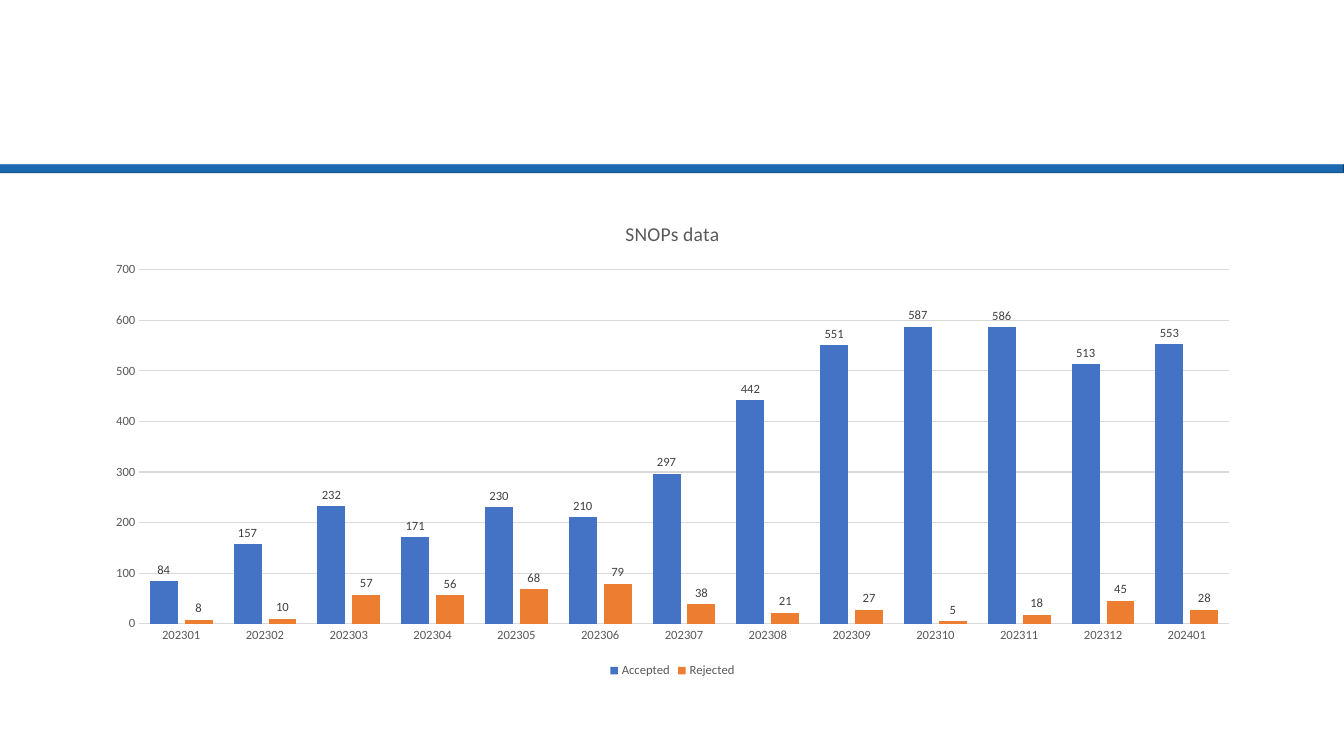
from pptx import Presentation
from pptx import util as u
from pptx.chart.data import CategoryChartData
from pptx.dml.color import RGBColor
from pptx.enum import chart as ch, shapes

COLORS = {
    "bar": "1B69B0", "accepted": "4472C4", "rejected": "ED7D31",
    "grid": "D9D9D9", "muted": "595959", "label": "404040", "black": "000000",
}
EMU_PER_PX = 914400 / 100.8
MONTHS = [f"2023{month:02d}" for month in range(1, 13)] + ["202401"]
SERIES = {
    "Accepted": [84, 157, 232, 171, 230, 210, 297, 442, 551, 587, 586, 513, 553],
    "Rejected": [8, 10, 57, 56, 68, 79, 38, 21, 27, 5, 18, 45, 28],
}


def px(length):
    return u.Emu(round(length * EMU_PER_PX))


def color(name):
    return RGBColor.from_string(COLORS[name])


def set_font(font, size, color_name):
    font.name = "Calibri"
    font.size = u.Pt(size)
    font.bold = False
    font.color.rgb = color(color_name)


def write_text(frame, content, size=14, color_name="muted"):
    paragraph = frame.paragraphs[0]
    run = paragraph.add_run()
    run.text = content
    set_font(run.font, size, color_name)


class SlideBuilder:
    """Holds the chart text style and the slide being drawn."""

    small = 9

    def __init__(self, slide):
        self.slide = slide

    def add_divider(self, left, top, width, height):
        shape = self.slide.shapes.add_shape(
            shapes.MSO_SHAPE.BEVEL, px(left), px(top), px(width), px(height))
        shape.shadow.inherit = False
        shape.fill.solid()
        shape.fill.fore_color.rgb = color("bar")
        shape.line.fill.background()

    def add_column_chart(self, title, categories, series, left, top, width, height):
        data = CategoryChartData()
        data.categories = categories
        for name, values in series.items():
            data.add_series(name, values)
        chart = self.slide.shapes.add_chart(
            ch.XL_CHART_TYPE.COLUMN_CLUSTERED,
            px(left), px(top), px(width), px(height), data).chart
        set_font(chart.font, 10, "black")
        chart.has_title = True
        write_text(chart.chart_title.text_frame, title)
        chart.chart_title.include_in_layout = False
        chart.has_legend = True
        chart.legend.position = ch.XL_LEGEND_POSITION.BOTTOM
        chart.legend.include_in_layout = False
        set_font(chart.legend.font, self.small, "muted")
        self.style_axes(chart)
        self.style_columns(chart.plots[0])

    def style_axes(self, chart):
        for axis in (chart.category_axis, chart.value_axis):
            axis.major_tick_mark = axis.minor_tick_mark = ch.XL_TICK_MARK.NONE
            set_font(axis.tick_labels.font, self.small, "muted")
        chart.value_axis.format.line.fill.background()
        chart.value_axis.minimum_scale = 0
        chart.value_axis.maximum_scale = 700
        chart.value_axis.major_unit = 100
        gridlines = chart.value_axis.major_gridlines
        for line in (chart.category_axis.format.line, gridlines.format.line):
            line.color.rgb = color("grid")
            line.width = u.Pt(0.75)

    def style_columns(self, plot):
        plot.gap_width = 75
        plot.overlap = -25
        plot.vary_by_categories = False
        for series in plot.series:
            series.format.fill.solid()
            series.format.fill.fore_color.rgb = color(series.name.lower())
            labels = series.data_labels
            labels.show_value = True
            labels.position = ch.XL_LABEL_POSITION.OUTSIDE_END
            set_font(labels.font, self.small, "label")


def main():
    presentation = Presentation()
    presentation.slide_width = px(1344)
    presentation.slide_height = px(756)
    slide = presentation.slides.add_slide(presentation.slide_layouts[6])
    builder = SlideBuilder(slide)
    builder.add_divider(-3, 164, 1347, 9)
    builder.add_column_chart("SNOPs data", MONTHS, SERIES, 93, 202, 1159, 480)
    presentation.save("out.pptx")


if __name__ == "__main__":
    main()
